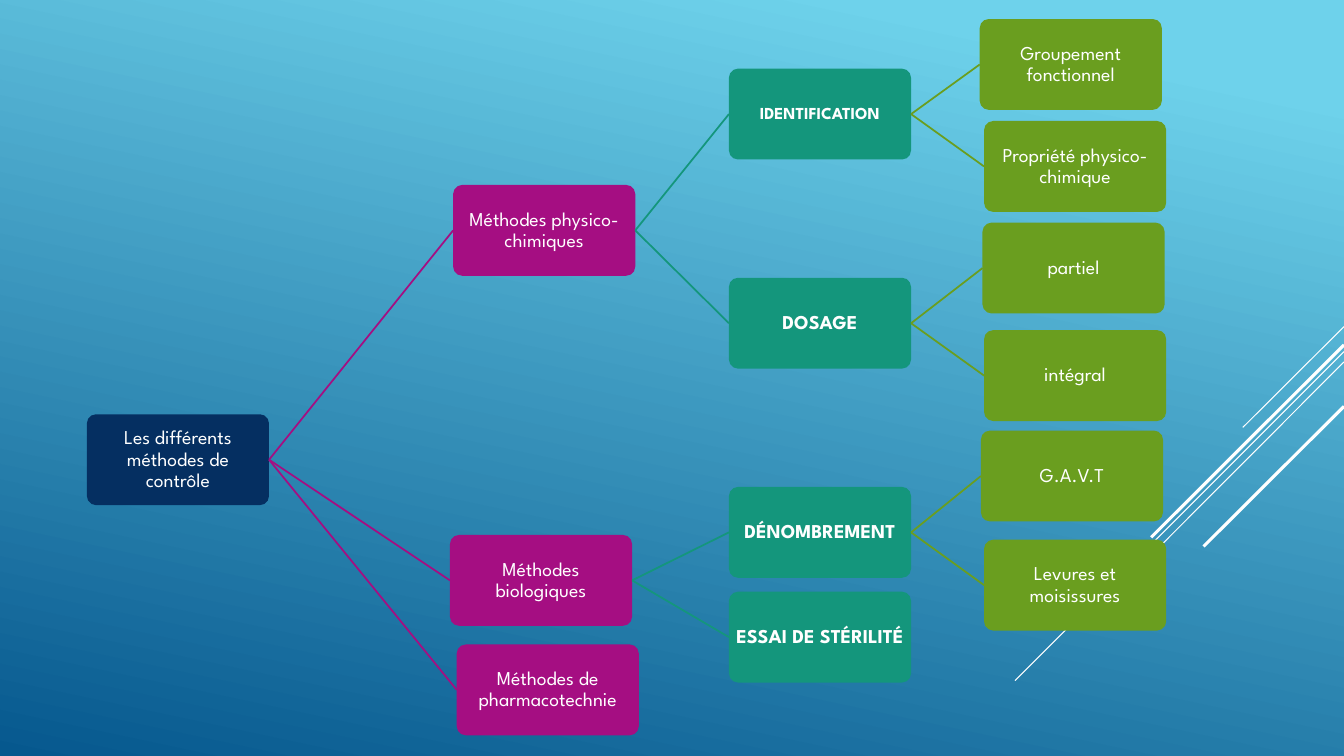
from pptx import Presentation
from pptx.dml.color import RGBColor
from pptx.enum.shapes import MSO_CONNECTOR, MSO_SHAPE
from pptx.enum.text import MSO_ANCHOR, PP_ALIGN
from pptx.oxml.ns import qn
from pptx.util import Cm, Pt
from lxml import etree

ROUND = MSO_SHAPE.ROUNDED_RECTANGLE
LINE = MSO_CONNECTOR.STRAIGHT
MIDDLE = MSO_ANCHOR.MIDDLE
CENTER = PP_ALIGN.CENTER

WHITE = RGBColor(0xFF, 0xFF, 0xFF)
SKY = RGBColor(0x6E, 0xD2, 0xEB)
OCEAN = RGBColor(0x06, 0x58, 0x8E)
NAVY = RGBColor(0x05, 0x2F, 0x61)
PURPLE = RGBColor(0xA5, 0x0E, 0x82)
TEAL = RGBColor(0x14, 0x96, 0x7C)
GREEN = RGBColor(0x6A, 0x9E, 0x1F)
LEVELS = [NAVY, PURPLE, TEAL, GREEN]

FONT = "League Spartan"
WIDTH, HEIGHT = 33.87, 19.05
BOX_W, BOX_H = 4.59, 2.29

# Each node: label, left, top, children (cm)
TREE = ("Les différents méthodes de contrôle", 2.19, 10.44, [
    ("Méthodes physico-chimiques", 11.42, 4.66, [
        ("IDENTIFICATION", 18.37, 1.73, [
            ("Groupement fonctionnel", 24.69, 0.48, []),
            ("Propriété physico-chimique", 24.8, 3.05, []),
        ]),
        ("DOSAGE", 18.37, 7, [
            ("partiel", 24.76, 5.61, []),
            ("intégral", 24.8, 8.32, []),
        ]),
    ]),
    ("Méthodes biologiques", 11.34, 13.48, [
        ("DÉNOMBREMENT", 18.37, 12.27, [
            ("G.A.V.T", 24.72, 10.85, []),
            ("Levures et moisissures", 24.8, 13.6, []),
        ]),
        ("ESSAI DE STÉRILITÉ", 18.37, 14.91, []),
    ]),
    ("Méthodes de pharmacotechnie", 11.51, 16.24, []),
])

# Diagonal streaks from the right edge: start y, end x, end y, weight
STREAKS = [
    (8.23, 31.32, 10.77, 0.75),
    (8.86, 25.58, 17.15, 0.75),
    (9.12, 28.6, 14.4, 0.75),
    (8.69, 29.01, 13.54, 2.25),
    (10.24, 30.33, 13.77, 2.25),
]


def paint(slide):
    fill = slide.background.fill
    fill.gradient()
    fill.gradient_angle = 258
    for stop, color, place in zip(fill.gradient_stops, (SKY, OCEAN), (0.1, 1)):
        stop.color.rgb = color
        stop.position = place


def link(slide, start, end, color, weight):
    line = slide.shapes.add_connector(LINE, *map(Cm, start + end))
    line.line.color.rgb = color
    line.line.width = Pt(weight)
    etree.SubElement(line._element.spPr, qn("a:effectLst"))


def write(frame, text, size=14, bold=False, color=WHITE):
    frame.word_wrap = True
    frame.vertical_anchor = MIDDLE
    frame.margin_left = frame.margin_right = Cm(0.1)
    frame.margin_top = frame.margin_bottom = Cm(0.1)
    para = frame.paragraphs[0]
    para.alignment = CENTER
    para.line_spacing = 0.9
    run = para.add_run()
    run.text = text
    run.font.name = FONT
    run.font.size = Pt(size)
    run.font.bold = bold
    run.font.color.rgb = color


def box(slide, text, left, top, level):
    shape = slide.shapes.add_shape(
        ROUND, Cm(left), Cm(top), Cm(BOX_W), Cm(BOX_H))
    shape.adjustments[0] = 0.1
    shape.shadow.inherit = False
    shape.fill.solid()
    shape.fill.fore_color.rgb = LEVELS[level]
    shape.line.fill.background()
    size = 12 if text == "IDENTIFICATION" else 14
    write(shape.text_frame, text, size=size, bold=level == 2)


def branch(slide, node, level=0):
    text, left, top, kids = node
    box(slide, text, left, top, level)
    start = (left + BOX_W, top + BOX_H / 2)
    for kid in kids:
        end = (kid[1], kid[2] + BOX_H / 2)
        link(slide, start, end, LEVELS[level + 1], 1.25)
        branch(slide, kid, level + 1)


def main():
    deck = Presentation()
    deck.slide_width, deck.slide_height = Cm(WIDTH), Cm(HEIGHT)
    slide = deck.slides.add_slide(deck.slide_layouts[6])
    # Background and streaks
    paint(slide)
    for top, left, low, weight in STREAKS:
        link(slide, (WIDTH, top), (left, low), WHITE, weight)
    # Tree of methods
    branch(slide, TREE)
    deck.save("out.pptx")


if __name__ == "__main__":
    main()
